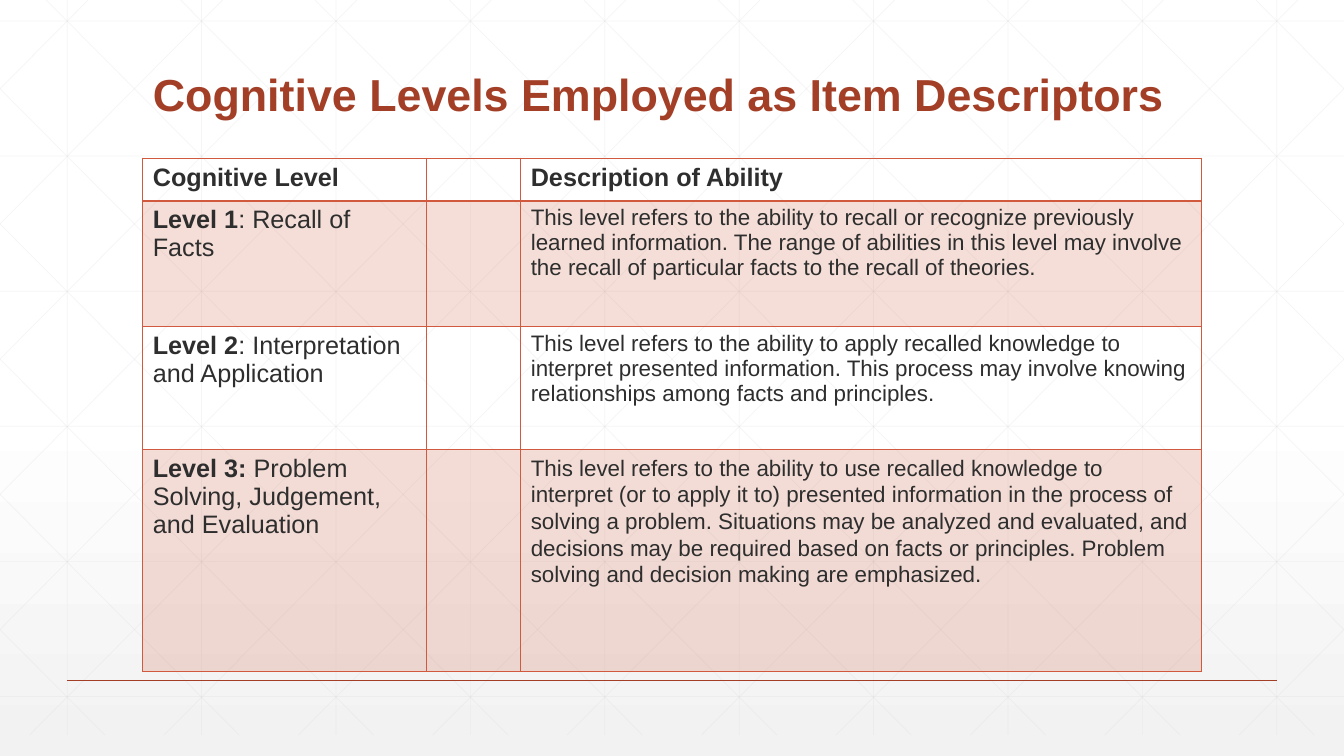
from lxml import etree
from pptx import Presentation
from pptx.dml.color import RGBColor
from pptx.enum import shapes, text
from pptx.oxml.ns import qn
from pptx.util import Pt

WHITE = RGBColor(0xFF, 0xFF, 0xFF)
PALE = RGBColor(0xF2, 0xF2, 0xF2)
GRID = RGBColor(0xD9, 0xD9, 0xD9)
RUST = RGBColor(0xA4, 0x3F, 0x27)
CORAL = RGBColor(0xD1, 0x5A, 0x3E)
INK = RGBColor(0x2D, 0x2E, 0x2D)
FONT = "Arial"

W, H = 960, 540
STEP = 96
GRID_BOTTOM = 525
SLOPE = 1.006

COLS = [202.4, 67.6, 486]
ROW_HEIGHTS = [30.4, 90, 87.7, 158.4]
ROWS = [
    ("Cognitive Level", "", "Description of Ability"),
    ("Level 1", ": Recall of Facts",
     "This level refers to the ability to recall or recognize previously learned "
     "information. The range of abilities in this level may involve the recall of "
     "particular facts to the recall of theories."),
    ("Level 2", ": Interpretation and Application",
     "This level refers to the ability to apply recalled knowledge to interpret "
     "presented information. This process may involve knowing relationships among "
     "facts and principles."),
    ("Level 3:", " Problem Solving, Judgement, and Evaluation",
     "This level refers to the ability to use recalled knowledge to interpret (or to "
     "apply it to) presented information in the process of solving a problem. "
     "Situations may be analyzed and evaluated, and decisions may be required based "
     "on facts or principles. Problem solving and decision making are emphasized."),
]


def set_alpha(fill_element, percent):
    clr = fill_element.find(".//" + qn("a:srgbClr"))
    etree.SubElement(clr, qn("a:alpha")).set("val", str(percent * 1000))


def format_run(r, size, color, bold):
    r.font.name = FONT
    r.font.size = Pt(size)
    r.font.bold = bold
    r.font.color.rgb = color


def paint_background(s):
    fill = s.background.fill
    fill.gradient()
    fill.gradient_angle = 270
    for stop, color, position in zip(fill.gradient_stops, (WHITE, PALE), (0.53, 1)):
        stop.color.rgb = color
        stop.position = position


def add_line(s, x1, y1, x2, y2, color, width, alpha=100):
    c = s.shapes.add_connector(
        shapes.MSO_CONNECTOR.STRAIGHT, Pt(x1), Pt(y1), Pt(x2), Pt(y2))
    c.line.color.rgb = color
    c.line.width = Pt(width)
    sp_pr = c.element.spPr
    if alpha < 100:
        set_alpha(sp_pr, alpha)
    etree.SubElement(sp_pr, qn("a:effectLst"))


def add_grid(s):
    segments = [(x, 0, x, GRID_BOTTOM) for x in range(48, W, STEP)]
    segments += [(0, 15 + 96.5 * i, W, 15 + 96.5 * i) for i in range(6)]
    for top_x in range(33 - 5 * STEP, W, STEP):
        x1 = max(top_x, 0)
        x2 = min(top_x + GRID_BOTTOM / SLOPE, W)
        y1, y2 = (x1 - top_x) * SLOPE, (x2 - top_x) * SLOPE
        segments += [(x1, y1, x2, y2), (W - x1, y1, W - x2, y2)]
    for segment in segments:
        add_line(s, *segment, GRID, 0.5, 25)


def add_title(s, title):
    sp = s.shapes.title
    sp.left, sp.top, sp.width, sp.height = Pt(102), Pt(0), Pt(756), Pt(90)
    tf = sp.text_frame
    tf.text = title
    tf.auto_size = text.MSO_AUTO_SIZE.NONE
    tf.vertical_anchor = text.MSO_ANCHOR.BOTTOM
    p = tf.paragraphs[0]
    p.alignment = text.PP_ALIGN.LEFT
    p.line_spacing = 0.9
    format_run(p.runs[0], 32, RUST, True)
    s.shapes.element.append(sp.element)


def set_borders(cell, widths):
    tc_pr = cell._tc.get_or_add_tcPr()
    for i, (side, width) in enumerate(widths.items()):
        ln = etree.Element(qn("a:" + side), w=str(Pt(width)))
        fill = etree.SubElement(ln, qn("a:solidFill"))
        etree.SubElement(fill, qn("a:srgbClr"), val=str(CORAL))
        tc_pr.insert(i, ln)


def style_cell(cell, row):
    if row % 2:
        cell.fill.solid()
        cell.fill.fore_color.rgb = CORAL
        set_alpha(cell._tc.tcPr, 20)
    else:
        cell.fill.background()
    set_borders(cell, {"lnL": 1, "lnR": 1, "lnT": 2 if row == 1 else 1,
                       "lnB": 2 if row == 0 else 1})


def write_cell(cell, parts, size, spacing=None):
    p = cell.text_frame.paragraphs[0]
    p.line_spacing = spacing
    for content, bold in parts:
        if content:
            r = p.add_run()
            r.text = content
            format_run(r, size, INK, bold)


def add_levels_table(s):
    frame = s.shapes.add_table(len(ROWS), len(COLS), Pt(102), Pt(113),
                               Pt(sum(COLS)), Pt(sum(ROW_HEIGHTS)))
    table = frame.table
    table.first_row = table.horz_banding = False
    for column, width in zip(table.columns, COLS):
        column.width = Pt(width)
    for i, (label, detail, ability) in enumerate(ROWS):
        table.rows[i].height = Pt(ROW_HEIGHTS[i])
        for cell in table.rows[i].cells:
            style_cell(cell, i)
        write_cell(table.cell(i, 0), [(label, True), (detail, False)], 18)
        write_cell(table.cell(i, 2), [(ability, i == 0)], 16 if i else 18,
                   1.07 if i == 3 else None)


def main():
    prs = Presentation()
    prs.slide_width, prs.slide_height = Pt(W), Pt(H)
    s = prs.slides.add_slide(prs.slide_layouts[5])
    paint_background(s)
    add_grid(s)
    add_line(s, 48, 486, 912, 486, RUST, 1)
    add_title(s, "Cognitive Levels Employed as Item Descriptors")
    add_levels_table(s)
    prs.save("out.pptx")


if __name__ == "__main__":
    main()
